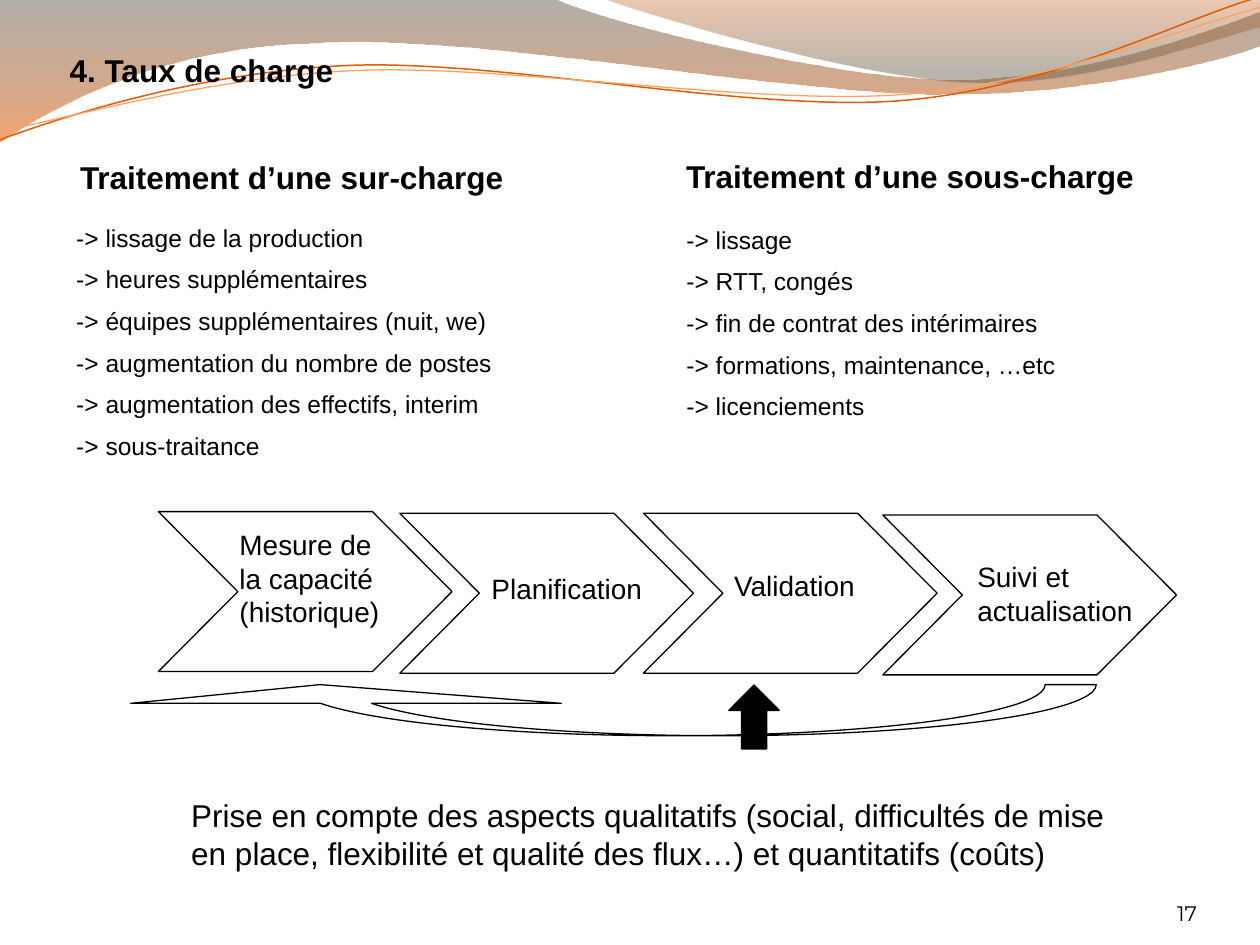
from math import cos, radians, sin

from lxml.etree import SubElement
from pptx import Presentation
from pptx.dml.color import RGBColor
from pptx.enum.shapes import MSO_SHAPE
from pptx.enum.text import MSO_ANCHOR, PP_ALIGN
from pptx.oxml.ns import qn
from pptx.util import Pt

THEME = {
    "ink": "000000", "dark_line": "E15B00", "light_line": "FFA365",
    "font": "Arial", "number_font": "Montserrat",
    "heading": 18, "step": 16, "body": 14, "number": 12, "outline": 0.75,
}

BANDS = [
    ([(0, 0), (316.8, -0.7), (342.7, 12.2, 478.1, 45.4, 545.8, 45.4),
      (614.2, 45.4, 689.8, 18.7, 720, 6.5), (720.7, 25.9),
      (707.8, 31.7, 626.4, 54.7, 537.1, 54), (447.8, 54, 275, 20.2, 185, 24.5),
      (92.9, 25.9, 33.1, 59.8, -0.7, 81.4), (0, 0)],
     (-0.7, -0.7, 721.4, 82.1), [(0, "554D41", 45), (1, "E75D00", 55)]),
    ([(344.9, -0.7), (366.5, 7.9, 491, 44.6, 553.7, 46.8),
      (616.3, 49.7, 691.9, 23, 720, 15.1), (720, 0), (344.9, -0.7)],
     (344.9, -0.7, 375.1, 50.4), [(0, "BD4C00", 30), (0.8, "685D4B", 45)]),
]
STRANDS = [
    ([(0, 79.9), (34.6, 67, 113.8, 41, 199.4, 37.4),
      (284.4, 33.8, 427, 64.1, 513.4, 57.6),
      (599.8, 51.1, 675.4, 10.8, 718.6, -1.4)],
     (-1.4, 15.8, 721.4, 51.1), "dark_line", 0.85),
    ([(0, 74.9), (33.8, 69.1, 118.1, 43.9, 203.8, 40.3),
      (290.2, 36.7, 429.8, 60.5, 516.2, 54),
      (601.9, 47.5, 677.5, 15.1, 720, 4.3)],
     (-1.4, 21.6, 722.2, 41.8), "light_line", 0.75),
]
STRAND_TILT = -2.7
HEADINGS = [
    ("4. Taux de charge", (34, 25.9, 164.2, 28)),
    ("Traitement d’une sur-charge", (39.9, 87.1, 260.6, 28)),
    ("Traitement d’une sous-charge", (386.2, 86.4, 275, 28)),
]
MEASURES = [
    (["-> lissage de la production", "-> heures supplémentaires",
      "-> équipes supplémentaires (nuit, we)",
      "-> augmentation du nombre de postes",
      "-> augmentation des effectifs, interim", "-> sous-traitance"],
     (36.5, 119.5, 299.5, 151.2)),
    (["-> lissage", "-> RTT, congés", "-> fin de contrat des intérimaires",
      "-> formations, maintenance, …etc", "-> licenciements"],
     (385.2, 121.4, 299.5, 126)),
]
STEPS = [
    ("Mesure de la capacité (historique)", (129.8, 298.1, 96.5, 64.8), (90.5, 292.4)),
    ("Planification", (273.8, 323, 100.8, 26.6), (228.5, 293.3)),
    ("Validation", (412.4, 321.1, 85.7, 26.6), (367.7, 293.3)),
    ("Suivi et actualisation", (551.4, 316.5, 109.4, 46.1), (504.5, 294.3)),
]
CHEVRON_SIZE = (167.8, 91.4)
CONCLUSION = ("Prise en compte des aspects qualitatifs (social, difficultés de mise "
              "en place, flexibilité et qualité des flux…) et quantitatifs (coûts)")


def color(name):
    return RGBColor.from_string(THEME.get(name, name))


def to_local(x, y, box, tilt):
    left, top, width, height = box
    dx, dy = x - left - width / 2, y - top - height / 2
    turn = radians(-tilt)
    return (Pt(width / 2 + dx * cos(turn) - dy * sin(turn)),
            Pt(height / 2 + dx * sin(turn) + dy * cos(turn)))


def add_curve(slide, parts, box, tilt=0):
    builder = slide.shapes.build_freeform(0, 0)
    builder.add_line_segments([(Pt(box[2]), Pt(box[3]))], close=False)
    curve = builder.convert_to_shape()
    curve.left, curve.top, curve.width, curve.height = map(Pt, box)
    curve.rotation = tilt
    curve.shadow.inherit = False
    outline = next(curve._element.iter(qn("a:path")))
    outline.set("w", str(curve.width))
    outline.set("h", str(curve.height))
    for segment in list(outline):
        outline.remove(segment)
    for index, part in enumerate(parts):
        tag = "a:cubicBezTo" if len(part) == 6 else "a:lnTo" if index else "a:moveTo"
        segment = SubElement(outline, qn(tag))
        for x, y in zip(part[::2], part[1::2]):
            local_x, local_y = to_local(x, y, box, tilt)
            SubElement(segment, qn("a:pt"), x=str(local_x), y=str(local_y))
    if parts[0] == parts[-1]:
        SubElement(outline, qn("a:close"))
    return curve


def add_band(slide, parts, box, stops):
    band = add_curve(slide, parts, box)
    band.line.fill.background()
    band.fill.gradient()
    band.fill.gradient_angle = 270
    for stop, (position, tint, _) in zip(band.fill.gradient_stops, stops):
        stop.position = position
        stop.color.rgb = color(tint)
    for tint_xml, (_, _, opacity) in zip(band._element.iter(qn("a:srgbClr")), stops):
        SubElement(tint_xml, qn("a:alpha"), val=str(opacity * 1000))


def add_strand(slide, parts, box, tint, width):
    strand = add_curve(slide, parts, box, STRAND_TILT)
    strand.fill.background()
    strand.line.color.rgb = color(tint)
    strand.line.width = Pt(width)


def add_text(slide, lines, box, size, bold=False, wrap=True, anchor=MSO_ANCHOR.TOP,
             insets=(7.2, 3.6), font="font", align=PP_ALIGN.LEFT):
    frame = slide.shapes.add_textbox(*map(Pt, box)).text_frame
    frame.word_wrap = wrap
    frame.vertical_anchor = anchor
    frame.margin_left = frame.margin_right = Pt(insets[0])
    frame.margin_top = frame.margin_bottom = Pt(insets[1])
    frame.text = "\n".join(lines)
    for index, paragraph in enumerate(frame.paragraphs):
        paragraph.alignment = align
        if index:
            paragraph.space_before = Pt(THEME[size] / 2)
        style = paragraph.runs[0].font
        style.name, style.size, style.bold = THEME[font], Pt(THEME[size]), bold
        style.color.rgb = color("ink")


def add_outline(slide, preset, box, adjustments, filled=False):
    outline = slide.shapes.add_shape(preset, *map(Pt, box))
    outline.shadow.inherit = False
    for index, value in enumerate(adjustments):
        outline.adjustments[index] = value
    if filled:
        outline.fill.solid()
        outline.fill.fore_color.rgb = color("ink")
    else:
        outline.fill.background()
    outline.line.color.rgb = color("ink")
    outline.line.width = Pt(THEME["outline"])
    return outline


def main():
    deck = Presentation()
    deck.slide_width, deck.slide_height = Pt(720), Pt(540)
    slide = deck.slides.add_slide(deck.slide_layouts[6])

    for band in BANDS:
        add_band(slide, *band)
    for strand in STRANDS:
        add_strand(slide, *strand)

    add_text(slide, ["17"], (624.2, 500.4, 59.8, 28.8), "number", insets=(0, 0),
             anchor=MSO_ANCHOR.BOTTOM, font="number_font", align=PP_ALIGN.RIGHT)
    for heading, box in HEADINGS:
        add_text(slide, [heading], box, "heading", bold=True, wrap=False,
                 anchor=MSO_ANCHOR.MIDDLE, insets=(5.8, 2.9))
    for measures, box in MEASURES:
        add_text(slide, measures, box, "body", anchor=MSO_ANCHOR.MIDDLE)

    for step, box, corner in STEPS:
        add_outline(slide, MSO_SHAPE.CHEVRON, corner + CHEVRON_SIZE, [0.497])
        add_text(slide, [step], box, "step")

    feedback = add_outline(slide, MSO_SHAPE.CURVED_DOWN_ARROW,
                           (59.8, 391.2, 566.6, 29.2), [4.215, 8.429, 0.366])
    feedback.rotation = 180
    add_outline(slide, MSO_SHAPE.UP_ARROW, (416.5, 391.5, 28.8, 36.5),
                [0.5, 0.502], filled=True)
    add_text(slide, [CONCLUSION], (102.2, 451.4, 550.8, 51.1), "heading")

    deck.save("out.pptx")


if __name__ == "__main__":
    main()
